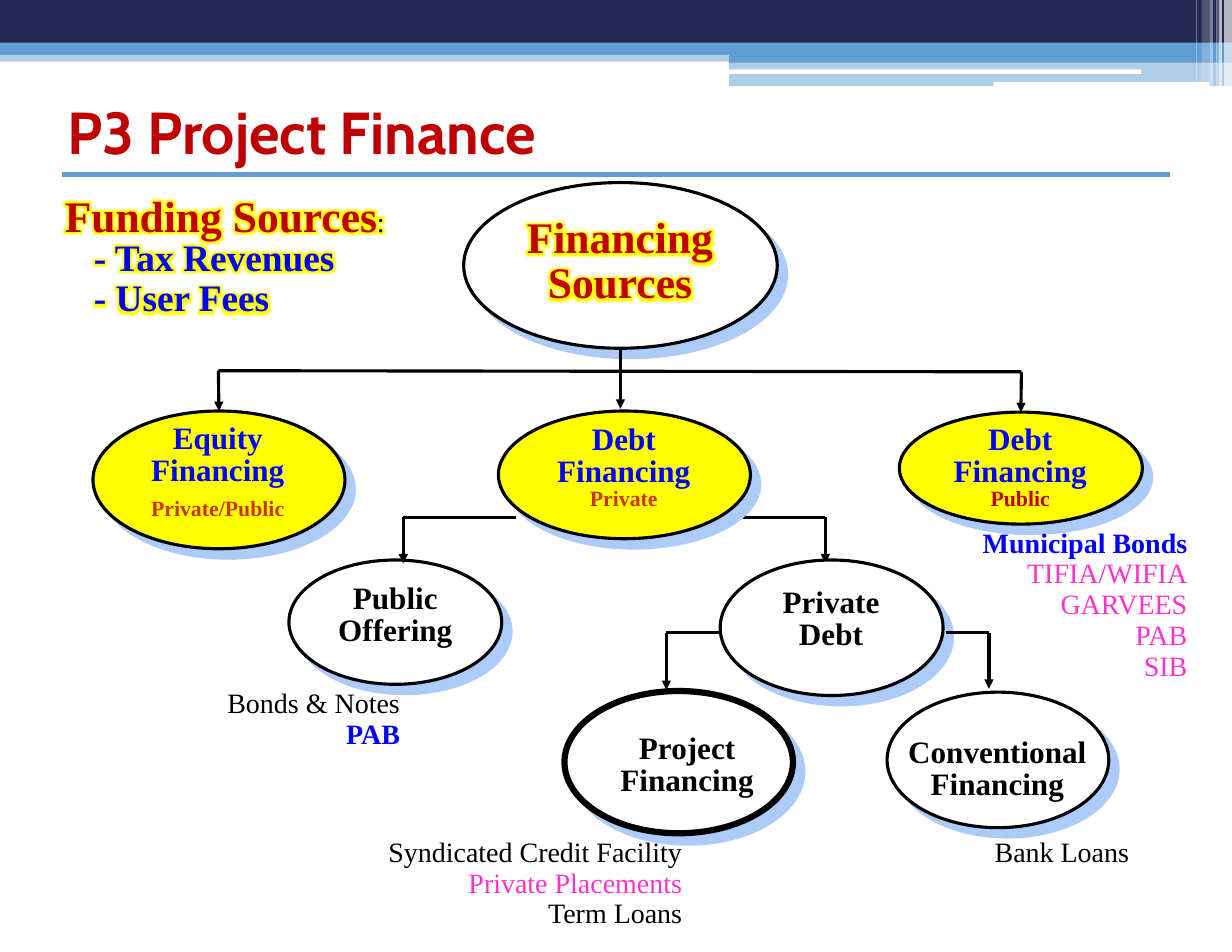
from lxml import etree
from pptx import Presentation
from pptx.dml.color import RGBColor
from pptx.enum.shapes import MSO_CONNECTOR, MSO_SHAPE
from pptx.enum.text import MSO_ANCHOR, MSO_AUTO_SIZE, PP_ALIGN
from pptx.oxml.ns import qn
from pptx.util import Inches, Pt

RECTANGLE, ROUNDED = MSO_SHAPE.RECTANGLE, MSO_SHAPE.ROUNDED_RECTANGLE
OVAL, STRAIGHT = MSO_SHAPE.OVAL, MSO_CONNECTOR.STRAIGHT
LEFT, CENTER, RIGHT = PP_ALIGN.LEFT, PP_ALIGN.CENTER, PP_ALIGN.RIGHT
TOP, MIDDLE = MSO_ANCHOR.TOP, MSO_ANCHOR.MIDDLE
FIT_SHAPE = MSO_AUTO_SIZE.SHAPE_TO_FIT_TEXT
TOP_SITE = 0

NAVY = RGBColor(0x24, 0x28, 0x52)
SKY = RGBColor(0x62, 0x9D, 0xD1)
SHADOW = RGBColor(0xAC, 0xCB, 0xF9)
WHITE = RGBColor(0xFF, 0xFF, 0xFF)
BLACK = RGBColor(0, 0, 0)
YELLOW = RGBColor(0xFF, 0xFF, 0)
RED = RGBColor(0xC0, 0, 0)
RUST = RGBColor(0xCC, 0x33, 0)
BLUE = RGBColor(0, 0, 0xFF)
PINK = RGBColor(0xFF, 0x33, 0xCC)


def child(parent, tag, **attributes):
    """Append a DrawingML element."""
    element = etree.SubElement(parent, qn(tag))
    for name, value in attributes.items():
        element.set(name, str(value))
    return element


def add_run(paragraph, text, size=18, color=BLACK, bold=False,
            font="Times New Roman", glow=None):
    run = paragraph.add_run()
    run.text = text
    run.font.size = Pt(size)
    run.font.bold = bold
    run.font.name = font
    run.font.color.rgb = color
    if glow:
        effects = etree.Element(qn("a:effectLst"))
        halo = child(effects, "a:glow", rad=Pt(8))
        child(halo, "a:srgbClr", val=glow)
        run.font._element.find(qn("a:solidFill")).addnext(effects)


class SlideBuilder:
    def __init__(self, slide):
        self.slide = slide
        self.shapes = slide.shapes

    def block(self, left, top, width, height, fill, alpha=100, kind=RECTANGLE):
        shape = self.shapes.add_shape(kind, Inches(left), Inches(top),
                                      Inches(width), Inches(height))
        shape.shadow.inherit = False
        shape.fill.solid()
        shape.fill.fore_color.rgb = fill
        shape.line.fill.background()
        if alpha < 100:
            color = shape._element.spPr.find(qn("a:solidFill"))[0]
            child(color, "a:alpha", val=alpha * 1000)
        return shape

    def ellipse(self, left, top, width, height, fill=WHITE, weight=2):
        shape = self.block(left, top, width, height, fill, kind=OVAL)
        shape.line.color.rgb = BLACK
        shape.line.width = Pt(weight)
        effects = shape._element.spPr.find(qn("a:effectLst"))
        shadow = child(effects, "a:outerShdw", blurRad=0, dist=Pt(8.5),
                       dir=45 * 60000, algn="ctr", rotWithShape=0)
        child(shadow, "a:srgbClr", val=SHADOW)
        return shape

    def text(self, left, top, width, height, paragraphs, align=LEFT,
             anchor=TOP, grow=True):
        """Each paragraph is (runs, line spacing, space before, indent);
        a space before given as text is a share of the line."""
        box = self.shapes.add_textbox(Inches(left), Inches(top),
                                      Inches(width), Inches(height))
        frame = box.text_frame
        frame.word_wrap = True
        frame.vertical_anchor = anchor
        if grow:
            frame.auto_size = FIT_SHAPE
        for index, (runs, spacing, before, indent) in enumerate(paragraphs):
            paragraph = frame.add_paragraph() if index else frame.paragraphs[0]
            paragraph.alignment = align
            paragraph.line_spacing = spacing
            properties = paragraph._p.get_or_add_pPr()
            if isinstance(before, str):
                paragraph.space_before = Pt(0)
                gap = properties.find(qn("a:spcBef"))
                gap.remove(gap[0])
                child(gap, "a:spcPct", val=int(before.rstrip("%")) * 1000)
            else:
                paragraph.space_before = Pt(before)
            if indent:
                properties.set("marL", str(Inches(indent)))
                properties.set("indent", "0")
            for words, style in runs:
                add_run(paragraph, words, **style)

    def label(self, left, top, width, height, name, note=None,
              note_before=0, note_color=RUST, **style):
        style = {"size": 20, "bold": True, **style}
        paragraphs = [([(name, style)], 0.85, "50%", 0)]
        if note:
            note_style = {"size": 14, "bold": True, "color": note_color}
            paragraphs.append(([(note, note_style)], 0.85, note_before, 0))
        self.text(left, top, width, height, paragraphs, align=CENTER)

    def examples(self, left, top, height, *items):
        paragraphs = [([(words, style)], 0.5, "50%", 0)
                      for words, style in items]
        self.text(left, top, 2.84, height, paragraphs, align=RIGHT)

    def line(self, x1, y1, x2, y2, color=BLACK, weight=2, arrow=False):
        connector = self.shapes.add_connector(
            STRAIGHT, Inches(x1), Inches(y1), Inches(x2), Inches(y2))
        connector.line.color.rgb = color
        connector.line.width = Pt(weight)
        if arrow:
            child(connector.line._get_or_add_ln(), "a:tailEnd", type="triangle")
        child(connector._element.spPr, "a:effectLst")
        return connector

    def branch(self, start, end, top, tip):
        self.line(start, top, end, top)
        self.line(end, top, end, tip, arrow=True)


def main():
    presentation = Presentation()
    presentation.slide_width = Inches(11)
    presentation.slide_height = Inches(8.5)
    slide = presentation.slides.add_slide(presentation.slide_layouts[6])
    build = SlideBuilder(slide)

    # Header bands
    build.block(0, 0.45, 11, 0.1, SKY, 50)
    build.block(0, 0, 11, 0.39, NAVY)
    build.block(0, 0.38, 11, 0.11, SKY)
    build.block(6.51, 0.45, 4.49, 0.11, SKY)
    build.block(6.51, 0.55, 4.49, 0.22, SKY, 50)
    build.block(6.5, 0.62, 3.69, 0.04, WHITE, kind=ROUNDED)
    build.block(8.87, 0.73, 1.93, 0.05, WHITE, kind=ROUNDED)
    for left, width, height, alpha in (
            (10.93, 0.07, 0.77, 65), (10.88, 0.03, 0.77, 65),
            (10.86, 0.01, 0.77, 60), (10.8, 0.03, 0.77, 40),
            (10.73, 0.07, 0.73, 20), (10.68, 0.01, 0.73, 30)):
        build.block(left, 0, width, height, WHITE, alpha)

    # Title
    build.line(0.55, 1.56, 10.45, 1.56, SKY, 3)
    title = {"size": 38, "color": RED, "bold": True, "font": "Cabin"}
    build.text(0.5, 0.5, 10.08, 1.33,
               [([("P3 Project Finance", title)], 1.0, 0, 0)],
               anchor=MIDDLE, grow=False)

    # Private debt: kinds of offering
    build.ellipse(2.58, 5, 1.9, 1.11)
    build.label(2.78, 5.17, 1.5, 0.66, "Public Offering")
    build.branch(6.63, 7.37, 4.62, 5.03)
    build.branch(4.61, 3.6, 4.62, 5.03)
    build.ellipse(7.92, 6.18, 1.98, 1.21)
    build.label(7.89, 6.54, 2.03, 0.67, "Conventional Financing")
    build.ellipse(5.04, 6.17, 2.04, 1.27, weight=4)
    build.label(5.08, 6.51, 2.11, 0.66, "Project Financing")
    build.ellipse(6.43, 5, 1.99, 1.21)
    build.label(6.67, 5.2, 1.5, 0.66, "Private Debt")
    build.branch(8.45, 8.83, 5.65, 6.15)
    build.branch(6.44, 5.95, 5.65, 6.16)

    # Main financing sources
    equity = build.ellipse(0.83, 3.67, 2.25, 1.23, YELLOW)
    build.label(1.13, 3.74, 1.63, 0.99, "Equity Financing", "Private/Public",
                note_before="50%", color=BLUE)
    build.ellipse(4.14, 1.63, 2.8, 1.48)
    build.label(4.46, 1.9, 2.15, 1.02, "Financing Sources",
                size=28, color=RED, glow=YELLOW)
    build.line(1.95, 3.31, 9.12, 3.32)
    build.line(5.54, 3.31, 5.54, 3.65, arrow=True)
    build.line(1.95, 3.31, 1.95, 3.67, arrow=True).end_connect(equity, TOP_SITE)
    build.ellipse(4.45, 3.67, 2.25, 1.14, YELLOW)
    build.label(4.72, 3.75, 1.7, 0.87, "Debt Financing", "Private", color=BLUE)
    build.line(5.54, 3.1, 5.54, 3.33)
    public = build.ellipse(8.03, 3.68, 2.17, 1, YELLOW)
    build.label(8.36, 3.75, 1.5, 0.87, "Debt Financing", "Public",
                note_color=RED, color=BLUE)
    build.line(9.12, 3.32, 9.12, 3.68, arrow=True).end_connect(public, TOP_SITE)

    # Examples under the ellipses
    plain, pink = {}, {"color": PINK}
    strong = {"color": BLUE, "bold": True}
    build.examples(3.35, 7.53, 0.86, ("Syndicated Credit Facility", plain),
                   ("Private Placements", pink), ("Term Loans", plain))
    build.examples(7.34, 7.53, 0.25, ("Bank Loans", plain))
    build.examples(0.83, 6.2, 0.57, ("Bonds & Notes", plain), ("PAB", strong))
    build.examples(7.86, 4.77, 1.46, ("Municipal Bonds", strong),
                   ("TIFIA/WIFIA", pink), ("GARVEES", pink),
                   ("PAB", pink), ("SIB", pink))

    # Funding sources
    heading = {"size": 28, "color": RED, "bold": True, "glow": YELLOW}
    item = {"size": 24, "color": BLUE, "bold": True, "glow": YELLOW}
    build.text(0.48, 1.84, 3.12, 1.06, [
        ([("Funding Sources", heading), (":", {"glow": YELLOW})], 0.5, "50%", 0),
        ([("- Tax Revenues", item)], 0.8, 3, 0.26),
        ([("- User Fees", item)], 0.8, 3, 0.26)])

    presentation.save("out.pptx")


if __name__ == "__main__":
    main()
